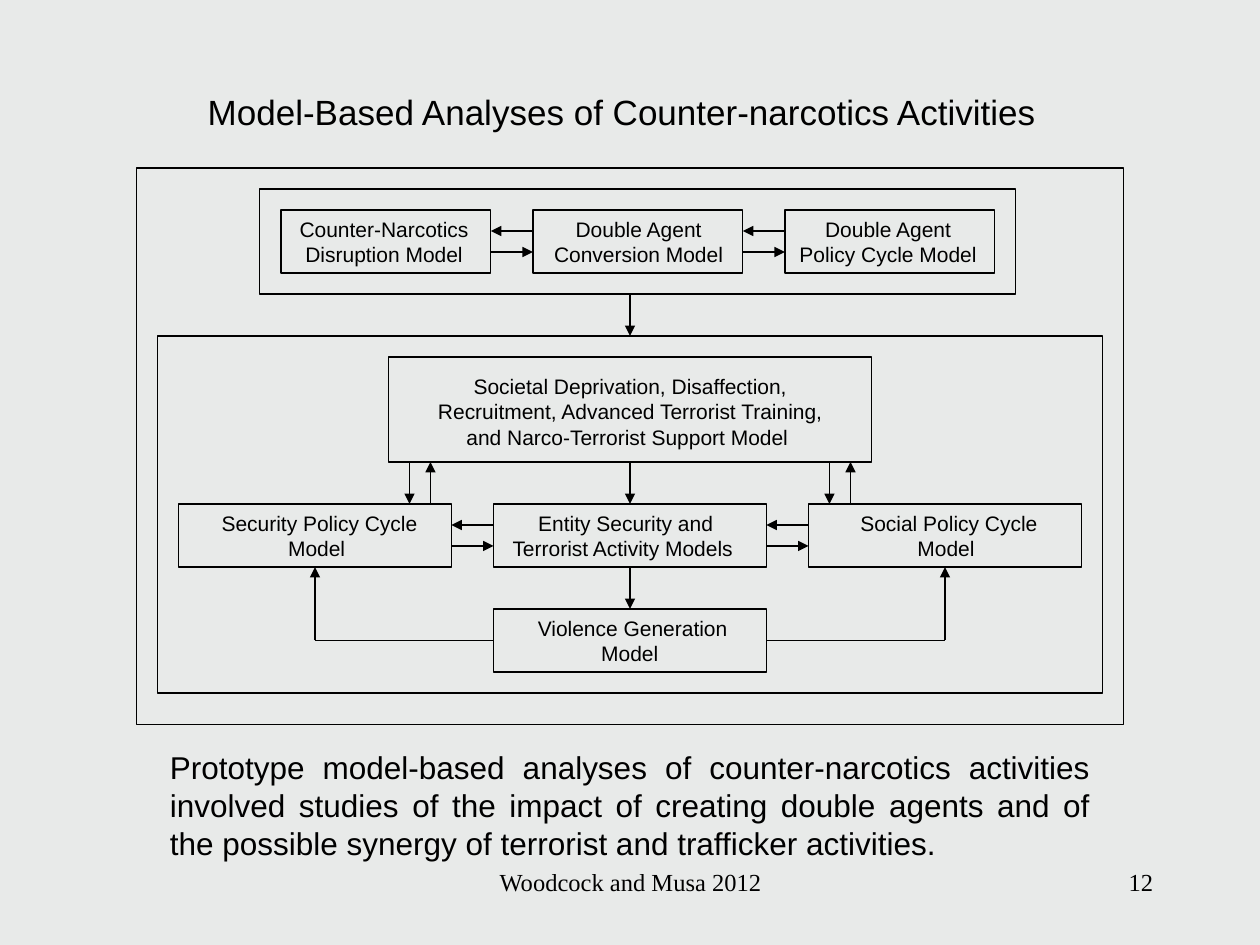
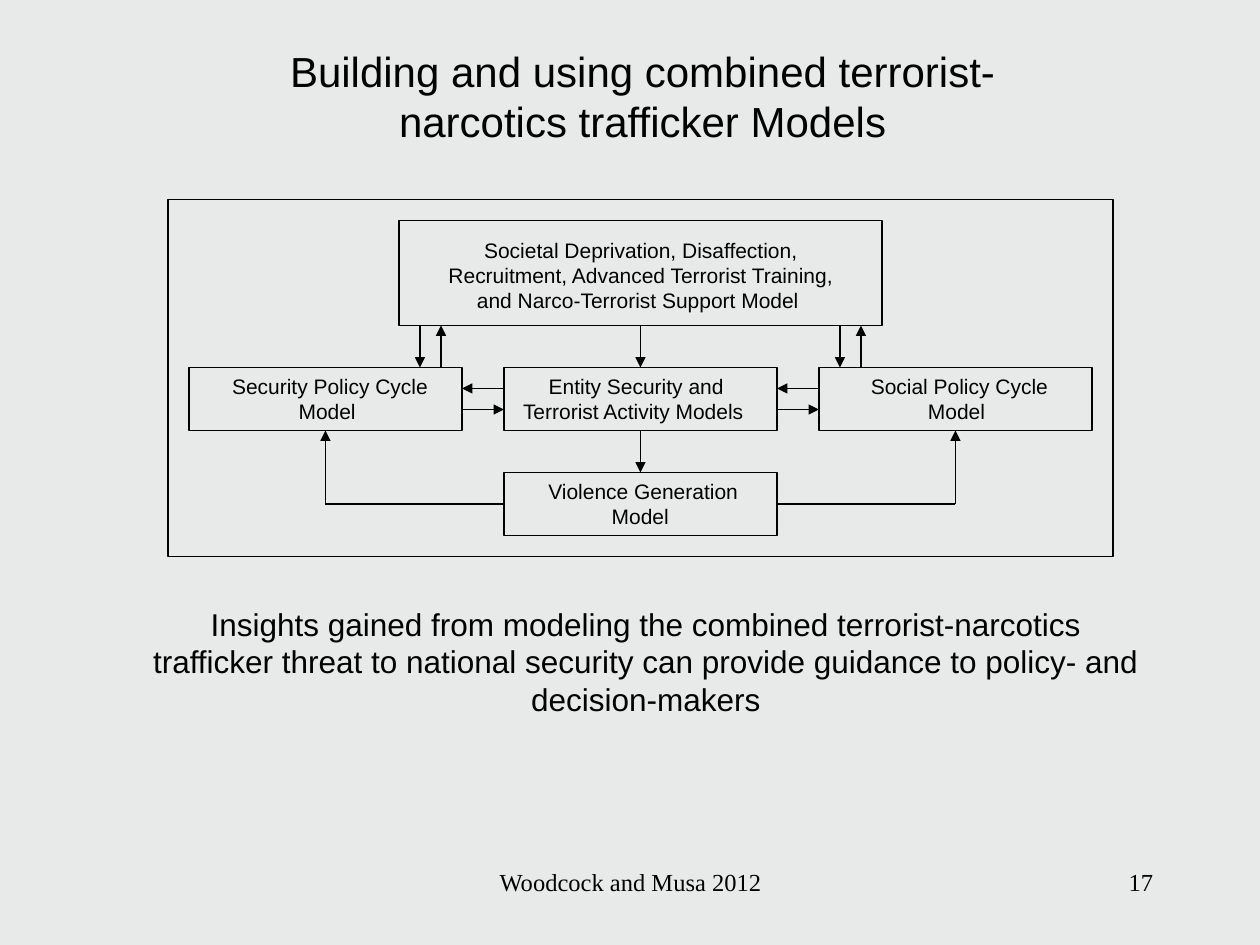
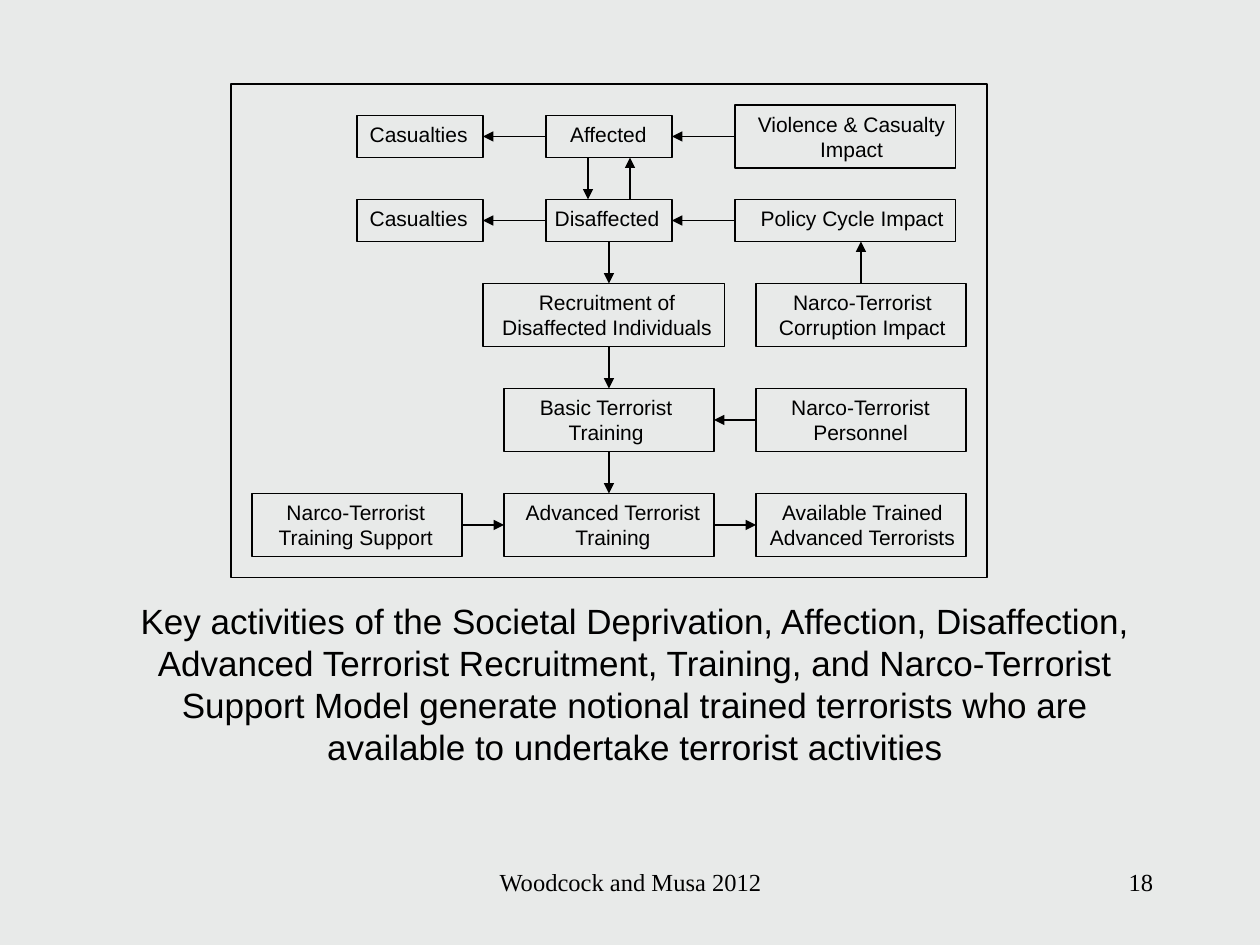
from lxml import etree
from pptx import Presentation
from pptx.dml.color import RGBColor
from pptx.enum.shapes import MSO_CONNECTOR, MSO_SHAPE
from pptx.enum.text import PP_ALIGN
from pptx.oxml.ns import qn
from pptx.util import Inches, Pt

RECT, LINE = MSO_SHAPE.RECTANGLE, MSO_CONNECTOR.STRAIGHT
MID, RIGHT, FULL = PP_ALIGN.CENTER, PP_ALIGN.RIGHT, PP_ALIGN.JUSTIFY
BLACK = RGBColor(0x00, 0x00, 0x00)
PAPER = RGBColor(0xE8, 0xEA, 0xE9)
SANS, SERIF = "Arial", "Times New Roman"
GRID = 12  # grid cells to the inch
FOOTER = "Woodcock and Musa 2012"

# Boxes: column, row, columns, rows, label shift and width in inches, label.
# A plain string wraps inside its label; a tuple holds one line per paragraph.
# Arrows: start column and row, end column and row.
CORE = {
    "frames": [(0, 0, 90, 34)],
    "boxes": [
        (22, 2, 46, 10, 0.17, 3.5, "Societal Deprivation, Disaffection, Recruitment, "
         "Advanced Terrorist Training, and Narco-Terrorist Support Model "),
        (2, 16, 26, 6, 0.24, 1.76, ("Security Policy Cycle", "Model ")),
        (32, 16, 26, 6, 0, 2.1, "Entity Security and Terrorist Activity Models "),
        (62, 16, 26, 6, 0.31, 1.61, ("Social Policy Cycle", "Model ")),
        (32, 26, 26, 6, 0.25, 1.71, ("Violence Generation", "Model ")),
    ],
    "arrows": [
        (45, 12, 45, 16), (45, 22, 45, 26),
        (24, 12, 24, 16), (26, 16, 26, 12), (64, 12, 64, 16), (66, 16, 66, 12),
        (32, 18, 28, 18), (28, 20, 32, 20), (62, 18, 58, 18), (58, 20, 62, 20),
        (15, 29, 15, 22), (75, 29, 75, 22),
    ],
    "lines": [(15, 29, 32, 29), (58, 29, 75, 29)],
}
AGENTS = {
    "frames": [(0, 0, 72, 10)],
    "boxes": [
        (2, 2, 20, 6, 0, 1.64, "Counter-Narcotics Disruption Model"),
        (26, 2, 20, 6, 0.02, 1.64, "Double Agent Conversion Model"),
        (50, 2, 20, 6, 0, 1.64, ("Double Agent", "Policy Cycle Model")),
    ],
    "arrows": [(26, 4, 22, 4), (22, 6, 26, 6), (50, 4, 46, 4), (46, 6, 50, 6)],
}
OUTER = {"frames": [(13, 16, 94, 53)], "arrows": [(60, 28, 60, 32)]}
TRAINING = {
    "frames": [(22, 8, 72, 47)],
    "boxes": [
        (34, 11, 12, 4, 0, 0.98, ("Casualties",)),
        (52, 11, 12, 4, 0.09, 0.81, ("Affected",)),
        (70, 10, 21, 6, 0.08, 1.69, ("Violence & Casualty", "Impact")),
        (34, 19, 12, 4, 0, 0.98, ("Casualties",)),
        (52, 19, 12, 4, -0.03, 1.03, ("Disaffected",)),
        (70, 19, 21, 4, 0.1, 1.66, ("Policy Cycle Impact",)),
        (46, 27, 23, 6, 0.05, 1.87, ("Recruitment of", "Disaffected Individuals")),
        (72, 27, 20, 6, 0.08, 1.53, ("Narco-Terrorist", "Corruption Impact")),
        (48, 37, 20, 6, 0.17, 1.28, ("Basic Terrorist", "Training")),
        (72, 37, 20, 6, 0.17, 1.32, ("Narco-Terrorist", "Personnel")),
        (24, 47, 20, 6, 0.11, 1.43, ("Narco-Terrorist", "Training Support")),
        (48, 47, 20, 6, 0.06, 1.61, ("Advanced Terrorist", "Training")),
        (72, 47, 20, 6, 0, 1.69, ("Available Trained", "Advanced Terrorists")),
    ],
    "arrows": [
        (52, 13, 46, 13), (70, 13, 64, 13), (52, 21, 46, 21), (70, 21, 64, 21),
        (56, 15, 56, 19), (60, 19, 60, 15), (82, 27, 82, 23),
        (58, 23, 58, 27), (58, 33, 58, 37), (58, 43, 58, 47),
        (72, 40, 68, 40), (44, 50, 48, 50), (68, 50, 72, 50),
    ],
}

# Texts: place in inches, size, alignment, indent in inches, words.
SLIDES = [
    {"page": 12, "charts": [(OUTER, 0, 0), (AGENTS, 24.75, 18), (CORE, 15, 32)],
     "texts": [
         ((1.54, 0.67, 6.79, 0.43), 20, MID, 0,
          ("Model-Based Analyses of Counter-narcotics Activities",)),
         ((0.25, 5.89, 8.5, 1), 18, FULL, 1,
          "Prototype model-based analyses of counter-narcotics activities involved "
          "studies of the impact of creating double agents and of the possible synergy "
          "of terrorist and trafficker activities.")]},
    {"page": 17, "charts": [(CORE, 16, 19)],
     "texts": [
         ((2.2, 0.31, 5.8, 0.9), 24, MID, 0,
          ("Building and using combined terrorist-", "narcotics trafficker Models")),
         ((1.09, 4.75, 8.07, 1), 18, MID, 0,
          "Insights gained from modeling the combined terrorist-narcotics trafficker "
          "threat to national security can provide guidance to policy- and "
          "decision-makers")]},
    {"page": 18, "charts": [(TRAINING, 0, 0)],
     "texts": [
         ((0.83, 4.71, 8.42, 1.43), 20, MID, 0,
          "Key activities of the Societal Deprivation, Affection, Disaffection, "
          "Advanced Terrorist Recruitment, Training, and Narco-Terrorist Support Model "
          "generate notional trained terrorists who are available to undertake "
          "terrorist activities")]},
]


def write(slide, place, size, align, indent, words, face=SANS):
    frame = slide.shapes.add_textbox(*map(Inches, place)).text_frame
    frame.word_wrap = isinstance(words, str)
    for i, line in enumerate([words] if frame.word_wrap else words):
        para = frame.add_paragraph() if i else frame.paragraphs[0]
        para.alignment = align
        if indent:
            para._p.get_or_add_pPr().set("marL", str(Inches(indent)))
        run = para.add_run()
        run.text = line
        run.font.size, run.font.name = Pt(size), face
        run.font.color.rgb = BLACK


def ink(line):
    line.color.rgb = BLACK
    line.width = Pt(0.75)


def frame_box(slide, *cells):
    box = slide.shapes.add_shape(RECT, *(Inches(c / GRID) for c in cells))
    box.shadow.inherit = False
    box.fill.background()
    ink(box.line)


def link(slide, ends, head):
    wire = slide.shapes.add_connector(LINE, *(Inches(c / GRID) for c in ends))
    ink(wire.line)
    props = wire._element.spPr
    if head:
        etree.SubElement(props.find(qn("a:ln")), qn("a:tailEnd"), type="triangle")
    etree.SubElement(props, qn("a:effectLst"))


def draw(slide, chart, left, top):
    """Draw one flow chart with its corner at a grid column and row."""
    for x, y, w, h in chart["frames"]:
        frame_box(slide, left + x, top + y, w, h)
    for x, y, w, h, shift, width, words in chart.get("boxes", []):
        x, y = left + x, top + y
        frame_box(slide, x, y, w, h)
        pad = 1 if h > 6 else 0
        place = (x / GRID + shift, (y + pad) / GRID, width, (h - 2 * pad) / GRID)
        write(slide, place, 12, MID, 0, words)
    for kind in ("arrows", "lines"):
        for x1, y1, x2, y2 in chart.get(kind, []):
            ends = (left + x1, top + y1, left + x2, top + y2)
            link(slide, ends, kind == "arrows")


def main():
    deck = Presentation()
    deck.slide_width, deck.slide_height = Inches(10), Inches(7.5)
    back = deck.slide_master.background.fill
    back.solid()
    back.fore_color.rgb = PAPER
    for item in SLIDES:
        slide = deck.slides.add_slide(deck.slide_layouts[6])
        write(slide, (3.42, 6.83, 3.17, 0.5), 14, MID, 0, FOOTER, SERIF)
        write(slide, (7.17, 6.83, 2.08, 0.5), 14, RIGHT, 0, str(item["page"]), SERIF)
        for chart, left, top in item["charts"]:
            draw(slide, chart, left, top)
        for text in item["texts"]:
            write(slide, *text)
    deck.save("out.pptx")


if __name__ == "__main__":
    main()
